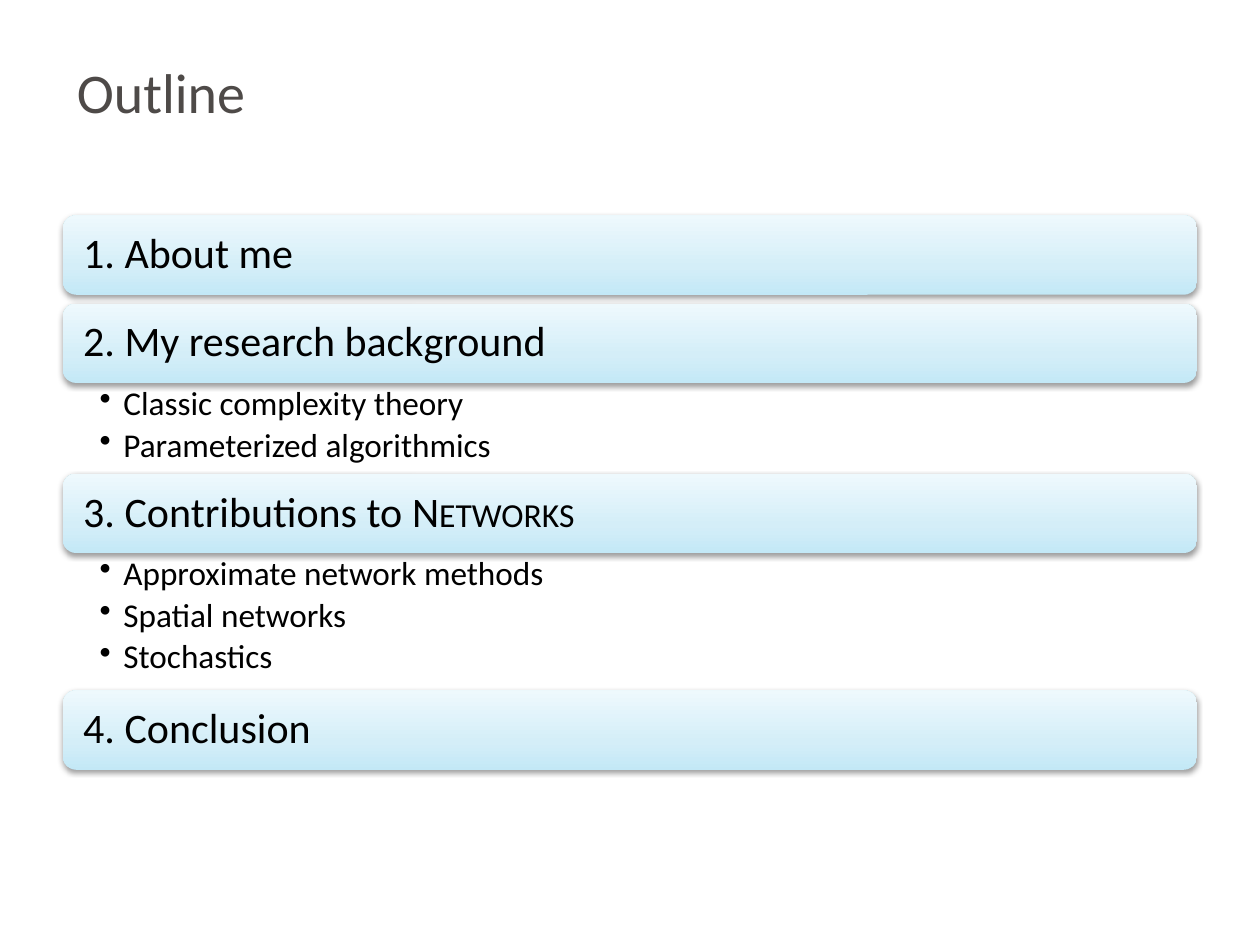
from pptx import Presentation
from pptx.dml.color import RGBColor
from pptx.enum.shapes import MSO_SHAPE
from pptx.enum.text import MSO_ANCHOR, PP_ALIGN
from pptx.oxml import parse_xml
from pptx.oxml.ns import nsdecls
from pptx.util import Inches, Pt

TITLE_GREY = RGBColor(0x4E, 0x4A, 0x48)
BLACK = RGBColor(0x00, 0x00, 0x00)
BAR_STOPS = [
    (0, RGBColor(0xC3, 0xE8, 0xF6)),
    (35, RGBColor(0xD4, 0xEE, 0xF8)),
    (100, RGBColor(0xEE, 0xF9, 0xFD)),
]

LEFT, WIDTH = 0.5, 9
FIRST_TOP, BAR_HEIGHT, BAR_GAP = 1.71, 0.63, 0.07

SECTIONS = [
    ("1. About me", "", [], BAR_GAP),
    ("2. My research background", "",
     ["Classic complexity theory", "Parameterized algorithmics"], 0.72),
    ("3. Contributions to ", "Networks",
     ["Approximate network methods", "Spatial networks", "Stochastics"], 1.09),
    ("4. Conclusion", "", [], 0),
]


class OutlineSlide:
    font_name = "Calibri"

    def __init__(self, deck):
        self.slide = deck.slides.add_slide(deck.slide_layouts[5])

    def format_span(self, span, size, color):
        span.font.name = self.font_name
        span.font.size = Pt(size)
        span.font.color.rgb = color

    def set_insets(self, frame, left, top, right, bottom):
        frame.margin_left, frame.margin_top = Inches(left), Inches(top)
        frame.margin_right, frame.margin_bottom = Inches(right), Inches(bottom)

    def add_title(self, text):
        title = self.slide.shapes.title
        title.left, title.top = Inches(0.51), Inches(0.38)
        title.width, title.height = Inches(9), Inches(0.69)
        frame = title.text_frame
        frame.text = text
        frame.vertical_anchor = MSO_ANCHOR.MIDDLE
        para = frame.paragraphs[0]
        para.alignment = PP_ALIGN.LEFT
        self.format_span(para.runs[0], 32, TITLE_GREY)

    def add_bar(self, top, heading, small_caps):
        bar = self.slide.shapes.add_shape(
            MSO_SHAPE.ROUNDED_RECTANGLE, Inches(LEFT), Inches(top),
            Inches(WIDTH), Inches(BAR_HEIGHT))
        bar.line.fill.background()
        self.style_bar(bar)
        frame = bar.text_frame
        frame.word_wrap = True
        frame.vertical_anchor = MSO_ANCHOR.MIDDLE
        self.set_insets(frame, 0.13, 0.1, 0.13, 0.1)
        frame.text = heading
        para = frame.paragraphs[0]
        para.alignment = PP_ALIGN.LEFT
        para.line_spacing = 0.9
        if small_caps:
            span = para.add_run()
            span.text = small_caps
            span.font._element.set("cap", "small")
        for span in para.runs:
            self.format_span(span, 24, BLACK)

    def style_bar(self, bar):
        stops = "".join(
            f'<a:gs pos="{position * 1000}"><a:srgbClr val="{color}"/></a:gs>'
            for position, color in BAR_STOPS)
        gradient = parse_xml(
            f'<a:gradFill {nsdecls("a")} rotWithShape="1"><a:gsLst>{stops}</a:gsLst>'
            '<a:lin ang="16200000" scaled="0"/></a:gradFill>')
        shadow = parse_xml(
            f'<a:effectLst {nsdecls("a")}><a:outerShdw blurRad="{Pt(3.1)}" '
            f'dist="{Pt(1.6)}" dir="5400000" rotWithShape="0">'
            '<a:srgbClr val="000000"><a:alpha val="38000"/></a:srgbClr>'
            '</a:outerShdw></a:effectLst>')
        properties = bar._element.spPr
        properties.prstGeom.addnext(gradient)
        properties.append(shadow)

    def add_bullets(self, top, height, items):
        box = self.slide.shapes.add_textbox(
            Inches(LEFT), Inches(top), Inches(WIDTH), Inches(height))
        frame = box.text_frame
        frame.word_wrap = True
        self.set_insets(frame, 0.29, 0.03, 0.19, 0.03)
        frame.text = "\n".join(items)
        for para in frame.paragraphs:
            para.level = 1
            para.line_spacing = 0.9
            para.space_after = Pt(3.3)
            properties = para._p.get_or_add_pPr()
            properties.set("marL", str(Inches(0.19)))
            properties.set("indent", str(-Inches(0.19)))
            properties.append(parse_xml(f'<a:buChar {nsdecls("a")} char="•"/>'))
            self.format_span(para.runs[0], 19, BLACK)


def main():
    deck = Presentation()
    deck.slide_width, deck.slide_height = Inches(10), Inches(7.5)
    outline = OutlineSlide(deck)
    outline.add_title("Outline")
    top = FIRST_TOP
    for heading, small_caps, items, space_below in SECTIONS:
        outline.add_bar(top, heading, small_caps)
        top += BAR_HEIGHT
        if items:
            outline.add_bullets(top, space_below, items)
        top += space_below
    deck.save("out.pptx")


if __name__ == "__main__":
    main()
